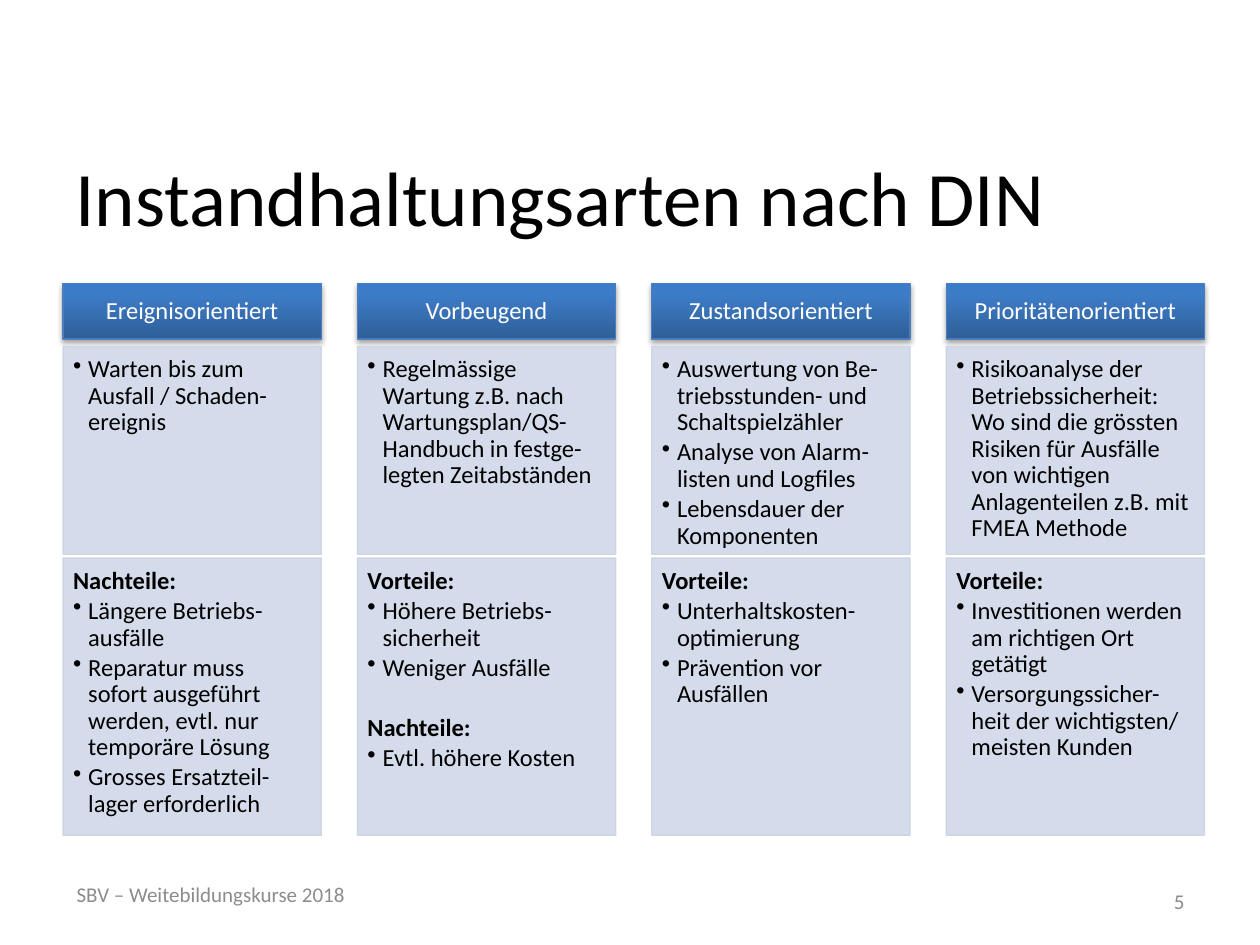
import copy
from dataclasses import dataclass

import lxml.etree
import pptx
import pptx.dml.color
import pptx.enum.shapes
import pptx.enum.text
import pptx.oxml.ns
import pptx.util

Inches = pptx.util.Inches
Pt = pptx.util.Pt
Align = pptx.enum.text.PP_ALIGN
Anchor = pptx.enum.text.MSO_ANCHOR
qn = pptx.oxml.ns.qn

FONT = "Calibri"
BLACK, WHITE, GREY = "000000", "FFFFFF", "8C8C8C"
HEADER_STOPS = [(0, "2F5F99"), (0.8, "3D7CC7"), (1, "3A7CCB")]
HEADER_LINE = "4B7EBC"
PANEL_FILL, PANEL_LINE = "D0D8E8", "CBD3E3"

LEFT, RIGHT, COLUMN_WIDTH = 0.5, 9.56, 2.05
HEADER_TOP, HEADER_HEIGHT = 2.25, 0.44
METHOD_TOP, METHOD_HEIGHT = 2.75, 1.65
RATING_TOP, RATING_HEIGHT = 4.43, 2.2
BULLET_INDENT = 0.12
SECTION_GAP = 17.25


@dataclass
class Section:
    heading: str
    points: list[str]


@dataclass
class MaintenanceType:
    name: str
    method: list[str]
    ratings: list[Section]


MAINTENANCE_TYPES = [
    MaintenanceType(
        "Ereignisorientiert",
        ["Warten bis zum Ausfall / Schaden-ereignis"],
        [Section("Nachteile:", [
            "Längere Betriebs-ausfälle",
            "Reparatur muss sofort ausgeführt werden, evtl. nur temporäre Lösung",
            "Grosses Ersatzteil-lager erforderlich"])]),
    MaintenanceType(
        "Vorbeugend",
        ["Regelmässige Wartung z.B. nach Wartungsplan/QS-Handbuch in festge-legten Zeitabständen"],
        [Section("Vorteile:", ["Höhere Betriebs-sicherheit", "Weniger Ausfälle"]),
         Section("Nachteile:", ["Evtl. höhere Kosten"])]),
    MaintenanceType(
        "Zustandsorientiert",
        ["Auswertung von Be-triebsstunden- und Schaltspielzähler",
         "Analyse von Alarm-listen und Logfiles",
         "Lebensdauer der Komponenten"],
        [Section("Vorteile:", ["Unterhaltskosten-optimierung", "Prävention vor Ausfällen"])]),
    MaintenanceType(
        "Prioritätenorientiert",
        ["Risikoanalyse der Betriebssicherheit: Wo sind die grössten Risiken für Ausfälle "
         "von wichtigen Anlagenteilen z.B. mit FMEA Methode"],
        [Section("Vorteile:", [
            "Investitionen werden am richtigen Ort getätigt",
            "Versorgungssicher-heit der wichtigsten/ meisten Kunden"])]),
]


def rgb(color: str) -> pptx.dml.color.RGBColor:
    return pptx.dml.color.RGBColor.from_string(color)


def add_span(para, text: str, size: float, color: str, bold: bool = False) -> None:
    span = para.add_run()
    span.text = text
    span.font.name = FONT
    span.font.size = Pt(size)
    span.font.bold = bold
    span.font.color.rgb = rgb(color)


def set_margins(frame, left: float, top: float, right: float, bottom: float) -> None:
    frame.margin_left, frame.margin_top = Inches(left), Inches(top)
    frame.margin_right, frame.margin_bottom = Inches(right), Inches(bottom)


def set_opacity(parent, percent: int) -> None:
    """Set the opacity of every plain colour below an element."""
    for color in parent.iter(qn("a:srgbClr")):
        lxml.etree.SubElement(color, qn("a:alpha"), val=str(percent * 1000))


def add_box(page, left: float, top: float, height: float, line: str):
    box = page.shapes.add_shape(
        pptx.enum.shapes.MSO_SHAPE.RECTANGLE,
        Inches(left), Inches(top), Inches(COLUMN_WIDTH), Inches(height))
    box.shadow.inherit = False
    box.line.color.rgb = rgb(line)
    box.line.width = Pt(0.75)
    box.text_frame.word_wrap = True
    return box


def fill_with_gradient(box, stops: list[tuple[float, str]]) -> None:
    box.fill.gradient()
    box.fill.gradient_angle = 90
    stop_list = box._element.spPr.find(f".//{qn('a:gsLst')}")
    while len(stop_list) < len(stops):
        stop_list.append(copy.deepcopy(stop_list[0]))
    for stop, (position, color) in zip(box.fill.gradient_stops, stops):
        stop.position = position
        stop.color.rgb = rgb(color)


def add_drop_shadow(box) -> None:
    effects = box._element.spPr.find(qn("a:effectLst"))
    shadow = lxml.etree.SubElement(
        effects, qn("a:outerShdw"), blurRad=str(Pt(3.1)), dist=str(Pt(1.8)),
        dir="5400000", rotWithShape="0")
    lxml.etree.SubElement(shadow, qn("a:srgbClr"), val=BLACK)
    set_opacity(shadow, 35)


def add_header(page, left: float, name: str) -> None:
    box = add_box(page, left, HEADER_TOP, HEADER_HEIGHT, HEADER_LINE)
    fill_with_gradient(box, HEADER_STOPS)
    add_drop_shadow(box)
    frame = box.text_frame
    set_margins(frame, 0.11, 0.06, 0.11, 0.06)
    frame.vertical_anchor = Anchor.MIDDLE
    para = frame.paragraphs[0]
    para.alignment = Align.CENTER
    para.line_spacing = 0.9
    add_span(para, name, 14, WHITE)


def add_panel(page, left: float, top: float, height: float):
    """Add a pale panel and return its text frame."""
    box = add_box(page, left, top, height, PANEL_LINE)
    box.fill.solid()
    box.fill.fore_color.rgb = rgb(PANEL_FILL)
    set_opacity(box._element.spPr, 90)
    frame = box.text_frame
    set_margins(frame, 0.08, 0.08, 0.11, 0.12)
    frame.vertical_anchor = Anchor.TOP
    return frame


def add_panel_line(frame, text: str, bullet: bool = True, space_before: float = 0) -> None:
    first = frame.paragraphs[0]
    para = frame.add_paragraph() if first.runs else first
    if bullet:
        properties = para._p.get_or_add_pPr()
        properties.set("marL", str(Inches(BULLET_INDENT)))
        properties.set("indent", str(-Inches(BULLET_INDENT)))
        lxml.etree.SubElement(properties, qn("a:buChar"), char="•")
    para.alignment = Align.LEFT
    para.line_spacing = 0.9
    para.space_before = Pt(space_before)
    para.space_after = Pt(2.1)
    add_span(para, text, 14, BLACK, bold=not bullet)


def add_column(page, left: float, kind: MaintenanceType) -> None:
    add_header(page, left, kind.name)
    method = add_panel(page, left, METHOD_TOP, METHOD_HEIGHT)
    for point in kind.method:
        add_panel_line(method, point)
    rating = add_panel(page, left, RATING_TOP, RATING_HEIGHT)
    for number, section in enumerate(kind.ratings):
        add_panel_line(rating, section.heading, bullet=False,
                       space_before=SECTION_GAP if number else 0)
        for point in section.points:
            add_panel_line(rating, point)


def add_title(page, text: str) -> None:
    title = page.shapes.title
    title.left, title.top = Inches(0.5), Inches(0.92)
    title.width, title.height = Inches(9), Inches(1.26)
    title.text_frame.vertical_anchor = Anchor.MIDDLE
    para = title.text_frame.paragraphs[0]
    para.alignment = Align.LEFT
    add_span(para, text, 44, BLACK)


def add_footer(page, text: str, left: float, top: float, width: float, align) -> None:
    box = page.shapes.add_textbox(Inches(left), Inches(top), Inches(width), Inches(0.4))
    box.text_frame.word_wrap = True
    box.text_frame.vertical_anchor = Anchor.MIDDLE
    para = box.text_frame.paragraphs[0]
    para.alignment = align
    add_span(para, text, 12, GREY)


def main() -> None:
    deck = pptx.Presentation()
    deck.slide_width, deck.slide_height = Inches(10), Inches(7.5)
    page = deck.slides.add_slide(deck.slide_layouts[5])
    add_title(page, "Instandhaltungsarten nach DIN")
    add_footer(page, "5", 7.17, 6.95, 2.33, Align.RIGHT)
    add_footer(page, "SBV – Weitebildungskurse 2018", 0.51, 6.9, 2.83, Align.LEFT)
    pitch = (RIGHT - LEFT - COLUMN_WIDTH) / (len(MAINTENANCE_TYPES) - 1)
    for number, kind in enumerate(MAINTENANCE_TYPES):
        add_column(page, LEFT + number * pitch, kind)
    deck.save("out.pptx")


if __name__ == "__main__":
    main()
